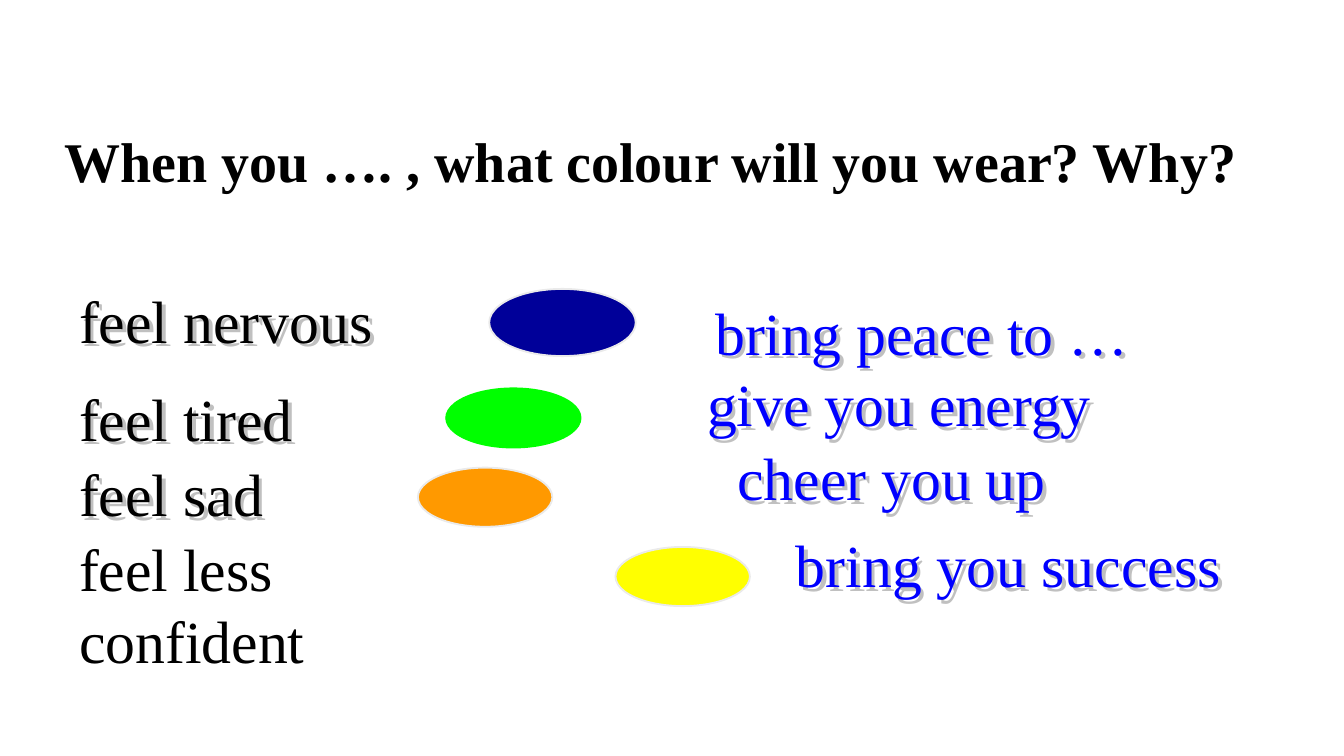
from dataclasses import dataclass

from lxml import etree
from pptx import Presentation
from pptx.dml.color import RGBColor
from pptx.enum import shapes, text
from pptx.oxml.ns import qn
from pptx.util import Inches, Pt


@dataclass(frozen=True)
class Theme:
    font: str = "Times New Roman"
    head: int = 30
    body: int = 32
    ink: str = "000000"
    blue: str = "0000FF"
    shade: str = "C0C0C0"
    rim: str = "EAEAEA"
    navy: str = "000099"
    green: str = "00FF00"
    amber: str = "FF9900"
    yellow: str = "FFFF00"


T = Theme()


def place(item, box):
    item.left, item.top, item.width, item.height = map(Inches, box)


def shade(item):
    """Give an unfilled text box a shadow, which falls from its letters."""
    effects = etree.SubElement(item._element.spPr, qn("a:effectLst"))
    drop = etree.SubElement(effects, qn("a:outerShdw"), dist="35921",
                            dir="2700000", algn="ctr", rotWithShape="0")
    etree.SubElement(drop, qn("a:srgbClr"), val=T.shade)


def write(item, words, size, color, align=text.PP_ALIGN.LEFT, bold=False):
    frame = item.text_frame
    frame.word_wrap = True
    frame.auto_size = text.MSO_AUTO_SIZE.NONE
    frame.vertical_anchor = text.MSO_ANCHOR.TOP
    para = frame.paragraphs[0]
    para.alignment = align
    para.line_spacing = 1.0
    para.space_before = Pt(0)
    run = para.add_run()
    run.text = words
    run.font.name = T.font
    run.font.size, run.font.bold = Pt(size), bold
    run.font.color.rgb = RGBColor.from_string(color)


def title(slide, box):
    item = slide.shapes.title
    place(item, box)
    write(item, "When you …. , what colour will you wear? Why?", T.head, T.ink, bold=True)


def label(slide, box, words, color, align, shadow=True):
    item = slide.shapes.add_textbox(*map(Inches, box))
    write(item, words, T.body, color, align)
    if shadow:
        shade(item)


def feelings(slide, box):
    left, top, wide, high = box
    rows = [(0, "feel nervous", True), (0.73, "feel tired", True),
            (1.29, "feel sad", True), (1.85, "feel less confident", False)]
    for down, words, shadow in rows:
        label(slide, (left, top + down, wide, high), words, T.ink,
              text.PP_ALIGN.LEFT, shadow)


def colours(slide, box):
    left, top, wide, high = box
    spots = [(0.53, 0, 1.09, 0.5, T.navy, T.rim),
             (0.21, 0.74, wide, high, T.green, T.green),
             (0, 1.33, wide, high, T.amber, T.rim),
             (1.47, 1.92, wide, high, T.yellow, T.rim)]
    for right, down, width, height, fill, rim in spots:
        spot = slide.shapes.add_shape(
            shapes.MSO_SHAPE.OVAL,
            *map(Inches, (left + right, top + down, width, height)))
        spot.shadow.inherit = False
        spot.fill.solid()
        spot.fill.fore_color.rgb = RGBColor.from_string(fill)
        spot.line.color.rgb = RGBColor.from_string(rim)
        spot.line.width = Pt(1)


def reasons(slide, box):
    left, top, wide, high = box
    # Trailing spaces belong to the centred wording
    rows = [(-0.3, 0, 9.14, "bring peace to …"), (0, 0.53, wide, "give you energy"),
            (0, 1.08, wide, "cheer you up "), (0.87, 1.73, wide, "bring you success ")]
    for right, down, width, words in rows:
        label(slide, (left + right, top + down, width, high), words, T.blue,
              text.PP_ALIGN.CENTER)


def main():
    deck = Presentation()
    # A 16:9 page
    deck.slide_width, deck.slide_height = Inches(10), Inches(10 * 9 / 16)
    slide = deck.slides.add_slide(deck.slide_layouts[5])
    title(slide, (0.38, 0.89, 10.52, 0.6))
    colours(slide, (3.11, 2.15, 1, 0.44))
    feelings(slide, (0.49, 2.06, 3.2, 0.64))
    reasons(slide, (2.59, 2.15, 8.2, 0.64))
    deck.save("out.pptx")


if __name__ == "__main__":
    main()
